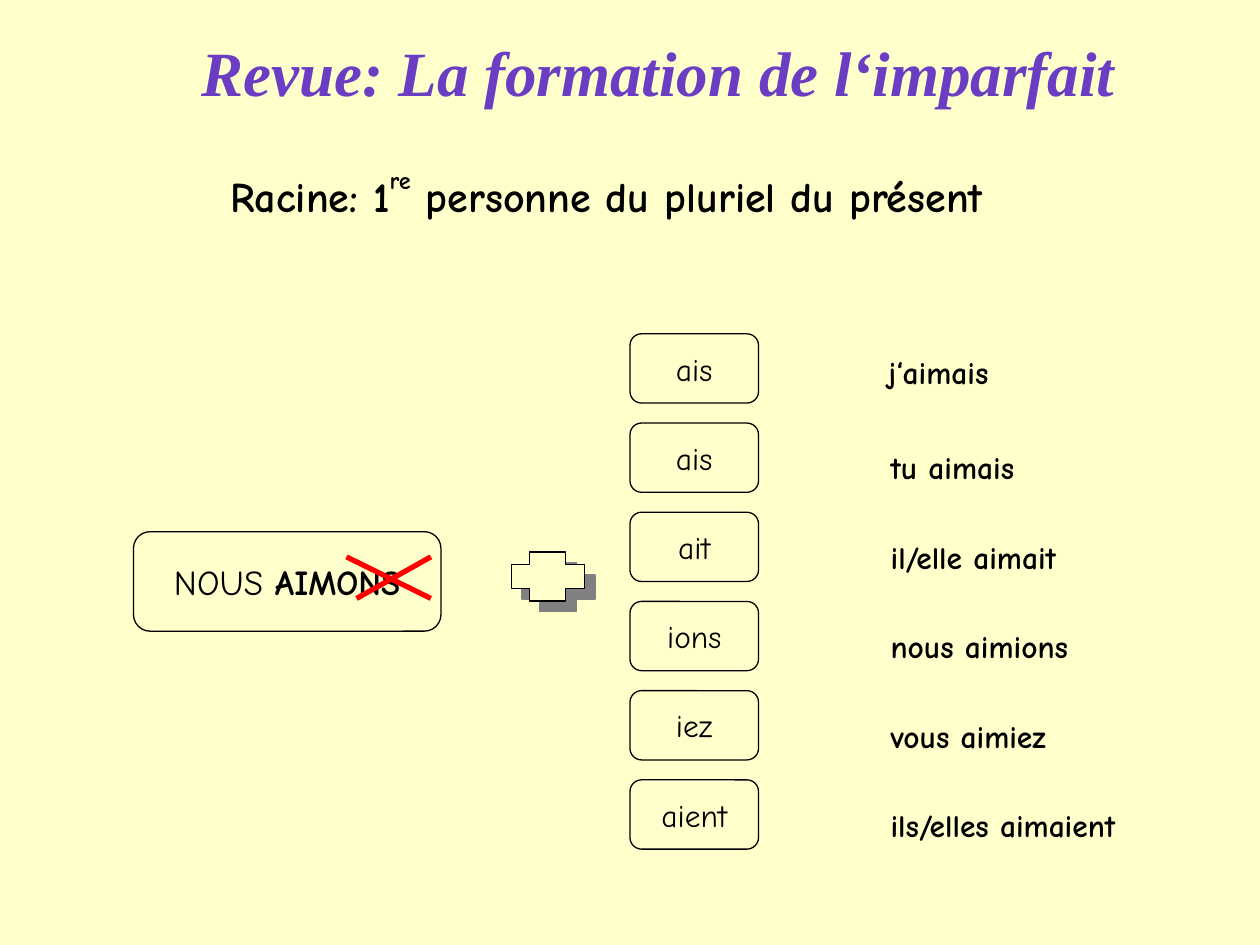
import pptx
import pptx.util
import pptx.dml.color
import pptx.enum.shapes
import pptx.enum.text
import pptx.oxml
import pptx.oxml.ns

COLORS = {"cream": "FFFFCC", "black": "000000", "purple": "6A3DC3", "red": "FF0000", "gray": "808080"}
COMIC = "Comic Neue"
ALIGN = pptx.enum.text.PP_ALIGN
ANCHOR = pptx.enum.text.MSO_ANCHOR
AUTO = pptx.enum.text.MSO_AUTO_SIZE
SHAPES = pptx.enum.shapes.MSO_SHAPE

prs = pptx.Presentation()
prs.slide_width = pptx.util.Inches(10)
prs.slide_height = pptx.util.Inches(7.5)
COL, ROW = prs.slide_width / 100, prs.slide_height / 100
s = prs.slides.add_slide(prs.slide_layouts[6])


def rgb(name):
    return pptx.dml.color.RGBColor.from_string(COLORS[name])


def write(sp, runs, size, color="black", font=COMIC, frame=None, align=ALIGN.LEFT):
    """Put runs of (text, font values) into a shape's first paragraph."""
    tf = sp.text_frame
    for name, value in (frame or {"word_wrap": False, "auto_size": AUTO.SHAPE_TO_FIT_TEXT}).items():
        setattr(tf, name, value)
    p = tf.paragraphs[0]
    p.alignment = align
    for text, values in runs:
        r = p.add_run()
        r.text = text
        r.font.color.rgb = rgb(color)
        for name, value in {"name": font, "size": pptx.util.Pt(size), **values}.items():
            setattr(r.font, name, value)
    return p


# Background
s.background.fill.solid()
s.background.fill.fore_color.rgb = rgb("cream")

# Title
sp = s.shapes.add_textbox(int(15 * COL), int(6.27 * ROW), int(85 * COL), int(2.53 * ROW))
write(sp, [("Revue: La formation de l‘imparfait", {"bold": True, "italic": True})], 36,
      "purple", "Times New Roman", {"word_wrap": True, "vertical_anchor": ANCHOR.MIDDLE})

# Stem rule, with a raised "re"
bold = {"bold": True}
sp = s.shapes.add_textbox(int(17.3 * COL), int(16.8 * ROW), int(69.9 * COL), int(6.67 * ROW))
p = write(sp, [("Racine: 1", bold), ("re", bold), (" personne du pluriel du présent", bold)], 24)
p.runs[1]._r.get_or_add_rPr().set("baseline", "56000")

# Stem box and column of ending boxes
endings = ["ais", "ais", "ait", "ions", "iez", "aient"]
boxes = [(10.6, 56.27, 24.4, 10.53, 20, [("NOUS ", {}), ("AIMONS", bold)])]
boxes += [(50, 35.33 + 9.44 * i, 10.2, 7.33, 18, [(ending, {})]) for i, ending in enumerate(endings)]
outlined = []
for x, y, w, h, size, runs in boxes:
    sp = s.shapes.add_shape(SHAPES.ROUNDED_RECTANGLE, int(x * COL), int(y * ROW), int(w * COL), int(h * ROW))
    write(sp, runs, size, frame={"word_wrap": False, "vertical_anchor": ANCHOR.MIDDLE}, align=ALIGN.CENTER)
    outlined.append(sp)

# Plus sign
x0, x1, x2, x3 = [x * COL for x in (40.6, 42, 44.9, 46.4)]
y0, y1, y2, y3 = [y * ROW for y in (58.4, 59.73, 62.27, 63.6)]
builder = s.shapes.build_freeform(int(x1), int(y0))
builder.add_line_segments([(x1, y1), (x0, y1), (x0, y2), (x1, y2), (x1, y3), (x2, y3),
                           (x2, y2), (x3, y2), (x3, y1), (x2, y1), (x2, y0)])
plus = builder.convert_to_shape()
outlined.append(plus)

for sp in outlined:
    sp.shadow.inherit = False
    sp.fill.solid()
    sp.fill.fore_color.rgb = rgb("cream")
    sp.line.color.rgb = rgb("black")
    sp.line.width = pptx.util.Pt(0.75)

# Hard shadow down and to the right of the plus sign
effects = plus._element.spPr.find(pptx.oxml.ns.qn("a:effectLst"))
effects.append(pptx.oxml.parse_xml(
    f'<a:outerShdw {pptx.oxml.ns.nsdecls("a")} dist="{pptx.util.Pt(8.5)}" dir="2700000" algn="ctr" '
    f'rotWithShape="0"><a:srgbClr val="{COLORS["gray"]}"/></a:outerShdw>'))

# Conjugated forms
forms = [("j‘aimais", 69.5, 36.67, 10.9)]
rest = [("tu aimais", 12.9), ("il/elle aimait", 17.2), ("nous aimions", 16.8),
        ("vous aimiez", 15.6), ("ils/elles aimaient", 22.3)]
forms += [(text, 69.7, 46.8 + 9.46 * i, w) for i, (text, w) in enumerate(rest)]
for text, x, y, w in forms:
    sp = s.shapes.add_textbox(int(x * COL), int(y * ROW), int(w * COL), int(5.33 * ROW))
    write(sp, [(text, bold)], 18)

# Red cross over the dropped ending
for x_start, y_start, y_end in [(27.5, 58.93, 63.33), (28.3, 63.33, 58.93)]:
    line = s.shapes.add_connector(pptx.enum.shapes.MSO_CONNECTOR.STRAIGHT, int(x_start * COL),
                                  int(y_start * ROW), int(34.2 * COL), int(y_end * ROW))
    line.line.color.rgb = rgb("red")
    line.line.width = pptx.util.Pt(3)
    line._element.spPr.append(pptx.oxml.parse_xml(f'<a:effectLst {pptx.oxml.ns.nsdecls("a")}/>'))

prs.save("out.pptx")
